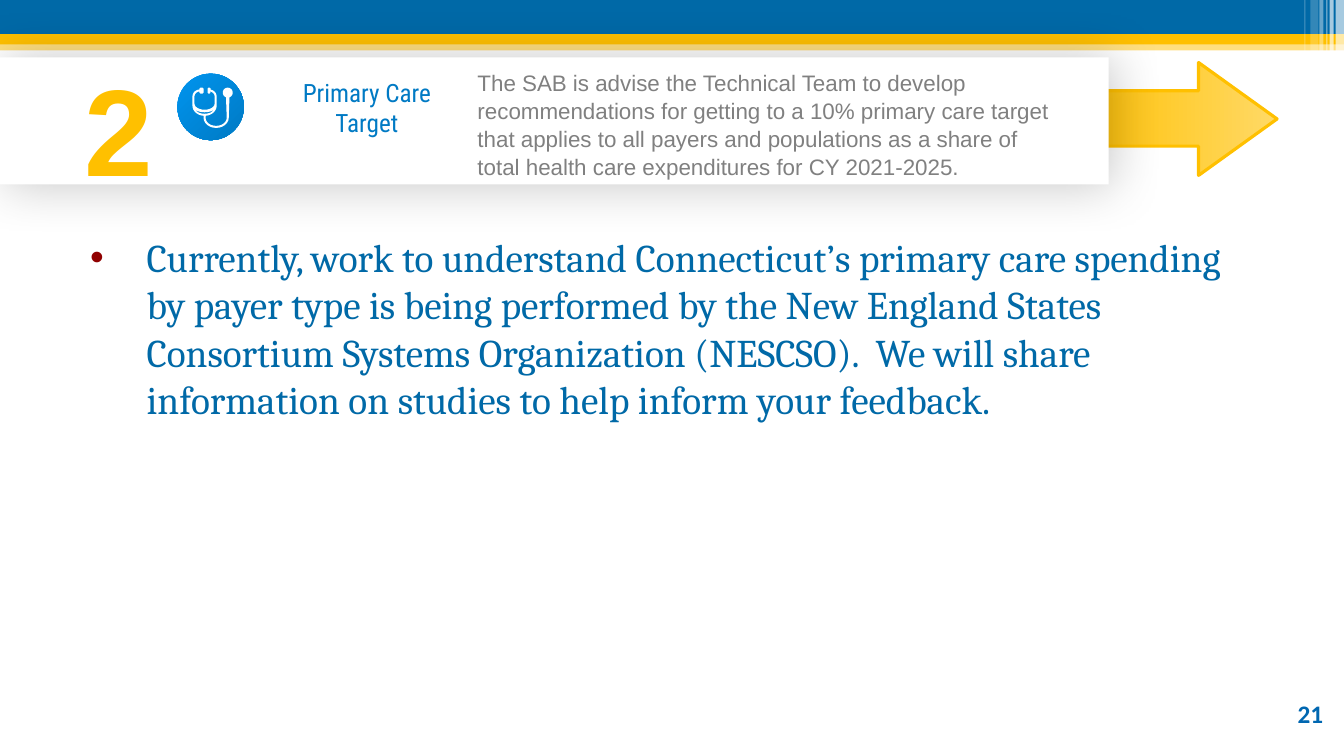
from math import cos, radians, sin

from lxml import etree
from pptx import Presentation
from pptx import util as u
from pptx.dml.color import RGBColor
from pptx.enum import shapes, text
from pptx.oxml import parse_xml
from pptx.oxml.ns import nsdecls, qn

Pt = u.Pt
COLORS = {
    "blue": "0069A7", "page": "0067B1", "label": "007AC4", "sky": "0094EE",
    "gold": "FFC000", "light gold": "FFD966", "white": "FFFFFF",
    "gray": "808080", "bullet": "900000", "shadow": "000000",
}
RGB = {name: RGBColor.from_string(value) for name, value in COLORS.items()}


def write_text(words, box, size, font, color, bold=False, align=text.PP_ALIGN.LEFT,
               anchor=text.MSO_ANCHOR.TOP, wrap=True, spacing=None, inset_top=3.6,
               bullet=False, shape=None):
    """Fill a new text box, or the given placeholder, with formatted text."""
    left, top, width, height = map(Pt, box)
    if shape is None:
        shape = slide.shapes.add_textbox(left, top, width, height)
    else:
        shape.left, shape.top, shape.width, shape.height = left, top, width, height
    frame = shape.text_frame
    frame.text = words
    frame.auto_size = text.MSO_AUTO_SIZE.NONE
    frame.word_wrap = wrap
    frame.vertical_anchor = anchor
    frame.margin_top = Pt(inset_top)
    for paragraph in frame.paragraphs:
        if bullet:
            properties = paragraph._p.get_or_add_pPr()
            properties.set("marL", str(Pt(49.7)))
            properties.set("indent", str(Pt(-40.3)))
            properties.append(parse_xml(
                f'<a:buClr {nsdecls("a")}><a:srgbClr val="{COLORS["bullet"]}"/></a:buClr>'))
            properties.append(parse_xml(
                f'<a:buFont {nsdecls("a")} typeface="Arial"/>'))
            properties.append(parse_xml(f'<a:buChar {nsdecls("a")} char="•"/>'))
        paragraph.alignment = align
        if spacing:
            paragraph.line_spacing = spacing
        paragraph.font.size = Pt(size)
        paragraph.font.name = font
        paragraph.font.bold = bold
        paragraph.font.color.rgb = RGB[color]


def arc(center_x, center_y, radius_x, radius_y, start, end, steps=12):
    """Points along an ellipse; angles in degrees, clockwise from the right."""
    angles = [radians(start + (end - start) * step / steps) for step in range(steps + 1)]
    return [(center_x + radius_x * cos(a), center_y + radius_y * sin(a)) for a in angles]


presentation = Presentation()
presentation.slide_width, presentation.slide_height = Pt(960), Pt(540)
slide = presentation.slides.add_slide(presentation.slide_layouts[5])

# Arrow behind the banner
builder = slide.shapes.build_freeform(85616, 4464, scale=Pt(0.01))
builder.add_line_segments([(91224, 8496), (85616, 12528), (85616, 10440),
                           (76320, 10440), (76320, 6480), (85616, 6480)])
arrow = builder.convert_to_shape()
arrow.shadow.inherit = False
arrow.line.color.rgb = RGB["gold"]
arrow.line.width = Pt(2.25)

# Header bars, corner stripes and banner: left, top, width, height, color, opacity
rectangles = [
    (0, 28.8, 960, 7.2, "gold", 50),
    (0, 0, 960, 24.5, "blue", 100),
    (0, 24.5, 960, 7.2, "gold", 100),
    (954, 0, 6, 49, "white", 65),
    (949.7, 0, 2.9, 49, "white", 65),
    (947.5, 0, 0.7, 49, "white", 60),
    (942.5, 0, 2.9, 49, "white", 40),
    (936, 0, 5.8, 46, "white", 20),
    (931.7, 0, 0.7, 46, "white", 30),
    (0, 41, 792, 90.7, "white", 100),
]
for *box, color, opacity in rectangles:
    banner = slide.shapes.add_shape(shapes.MSO_SHAPE.RECTANGLE, *map(Pt, box))
    banner.shadow.inherit = False
    banner.fill.solid()
    banner.fill.fore_color.rgb = RGB[color]
    banner.line.fill.background()
    if opacity < 100:
        fill_color = banner._element.spPr.find(f".//{qn('a:srgbClr')}")
        etree.SubElement(fill_color, qn("a:alpha"), val=str(opacity * 1000))

# The banner is the last rectangle; it casts a soft shadow
effects = banner._element.spPr.find(qn("a:effectLst"))
effects.append(parse_xml(
    f'<a:outerShdw {nsdecls("a")} blurRad="{Pt(37)}" dist="{Pt(3)}" dir="0" algn="ctr" '
    f'rotWithShape="0"><a:srgbClr val="{COLORS["shadow"]}"><a:alpha val="22000"/>'
    '</a:srgbClr></a:outerShdw>'))

write_text("Currently, work to understand Connecticut’s primary care spending by payer type "
           "is being performed by the New England States Consortium Systems Organization "
           "(NESCSO).  We will share information on studies to help inform your feedback.",
           (48, 163.4, 864, 358.6), 28, "Cambria", "blue", bullet=True)
write_text("21", (912, 495.4, 40.3, 28.8), 18, "Calibri", "page", bold=True,
           align=text.PP_ALIGN.RIGHT, anchor=text.MSO_ANCHOR.BOTTOM)
write_text("2", (53.3, 26, 64, 147.6), 88, "Arial", "gold", bold=True, wrap=False,
           inset_top=12)
title = slide.shapes.title
write_text("Primary Care\nTarget", (204.5, 51.8, 115.2, 51), 18, "Roboto Condensed",
           "label", align=text.PP_ALIGN.CENTER, wrap=False, shape=title)
banner._element.addnext(title._element)
write_text("The SAB is advise the Technical Team to develop recommendations for getting to "
           "a 10% primary care target that applies to all payers and populations as a share "
           "of total health care expenditures for CY 2021-2025.",
           (334, 44.6, 427.7, 85), 16, "Arial", "gray", spacing=1.05)

# Stethoscope badge
badge = slide.shapes.add_shape(shapes.MSO_SHAPE.OVAL, Pt(126.7), Pt(52.6), Pt(47.5), Pt(47.5))
badge.shadow.inherit = False
badge.line.fill.background()

gradients = [(arrow, 180, "light gold", "gold"), (badge, 315, "sky", "label")]
for shape, angle, *stop_colors in gradients:
    shape.fill.gradient()
    shape.fill.gradient_angle = angle
    for position, (stop, color) in enumerate(zip(shape.fill.gradient_stops, stop_colors)):
        stop.color.rgb = RGB[color]
        stop.position = position

left_ear = [(7, 2), (7, 1), (8, 0), (10, 0), (11, 1), (11, 5), (10, 6), (8, 6), (7, 5), (7, 4)]
right_ear = [(18, 5), (17, 6), (16, 6), (15, 5), (15, 1), (16, 0), (17, 0), (18, 1), (18, 2)]
stethoscope_outline = [
    *left_ear,
    *arc(7, 9, 5, 5, 270, 180),
    *arc(12, 16, 10, 6, 180, 0),
    *arc(17, 9, 5, 5, 0, -90),
    *right_ear,
    *arc(17, 9, 7, 7, -90, 0),
    *arc(12, 18, 12, 10, 0, 84),
    *arc(23.5, 30, 10.5, 8, 180, 0),
    *arc(35, 5, 5, 5, 110, 430),
    *arc(23.5, 30, 12.5, 10, 0, 180),
    *arc(12, 18, 12, 10, 95, 180),
    *arc(7, 9, 7, 7, 180, 270),
]
bowl_gap = arc(12, 21, 9, 5, 180, 0) + arc(12, 21, 9, 3.5, 0, 180)
contours = [[(x * 72, y * 72) for x, y in contour]
            for contour in (stethoscope_outline, bowl_gap)]
builder = slide.shapes.build_freeform(*contours[0][0], scale=Pt(0.01))
builder.add_line_segments(contours[0][1:])
builder.move_to(*contours[1][0])
builder.add_line_segments(contours[1][1:])
stethoscope = builder.convert_to_shape(Pt(137.5), Pt(62.6))
stethoscope.shadow.inherit = False
stethoscope.fill.solid()
stethoscope.fill.fore_color.rgb = RGB["white"]
stethoscope.line.fill.background()

presentation.save("out.pptx")
